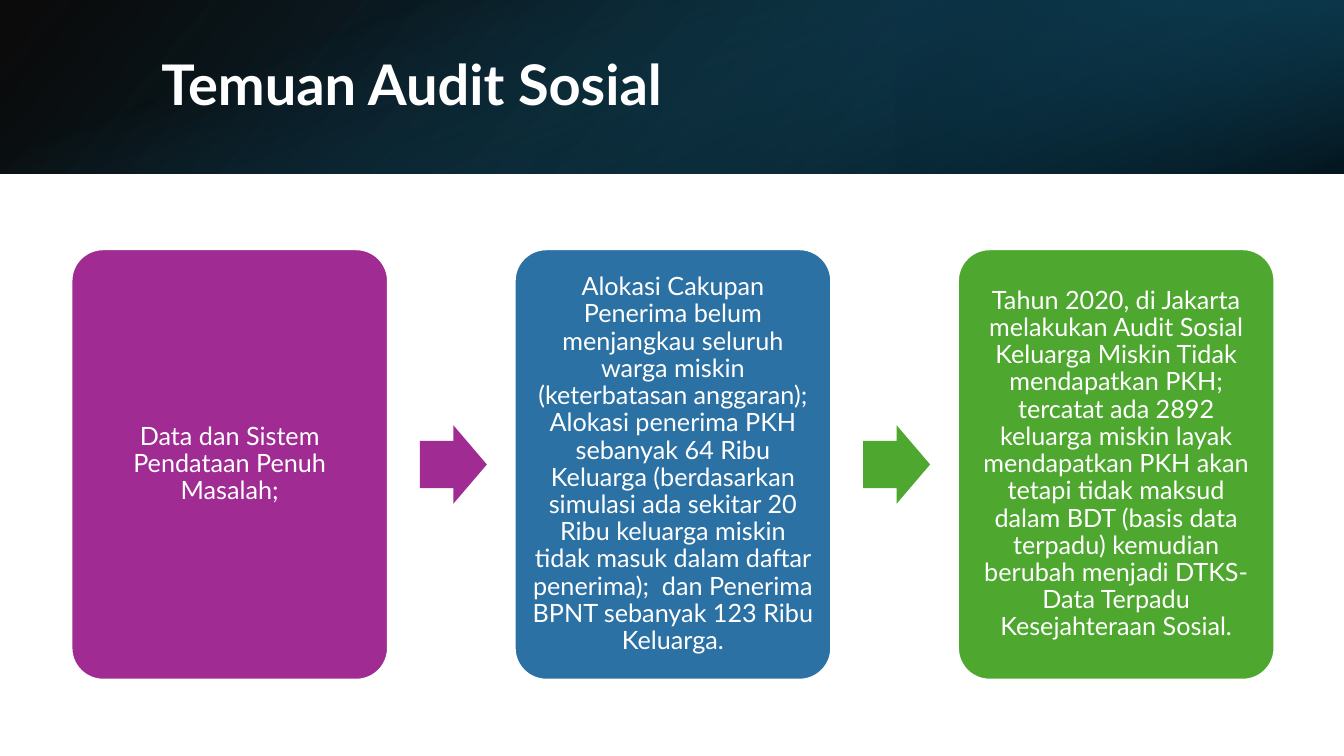
from dataclasses import dataclass

from lxml.etree import SubElement
from pptx import Presentation
from pptx.dml.color import RGBColor
from pptx.enum.shapes import MSO_SHAPE as SHAPE
from pptx.enum.text import MSO_ANCHOR as ANCHOR, MSO_AUTO_SIZE as AUTO, PP_ALIGN as ALIGN
from pptx.oxml.ns import qn
from pptx.util import Cm, Pt


@dataclass(frozen=True)
class Theme:
    font: str = "Lato"
    title_size: int = 40
    body_size: int = 18
    white: str = "FFFFFF"
    black: str = "000000"
    teal: str = "156082"
    deep_teal: str = "104862"
    dark_teal: str = "0B3041"
    purple: str = "A02B93"
    blue: str = "2C71A4"
    green: str = "4EA72E"


THEME = Theme()
SLIDE_W, SLIDE_H = 33.87, 19.05
BANNER_H = 4.38
CARD_X, CARD_Y, CARD_W, CARD_H = 1.8, 6.28, 7.98, 10.85
CARD_STEP = 11.17
ARROW_GAP, ARROW_W, ARROW_H = 0.8, 1.69, 1.98

FINDINGS = [
    (THEME.purple, "Data dan Sistem Pendataan Penuh Masalah;"),
    (THEME.blue,
     "Alokasi Cakupan Penerima belum menjangkau seluruh warga miskin "
     "(keterbatasan anggaran); Alokasi penerima PKH sebanyak 64 Ribu Keluarga "
     "(berdasarkan simulasi ada sekitar 20 Ribu keluarga miskin tidak masuk "
     "dalam daftar penerima);  dan Penerima BPNT sebanyak 123 Ribu Keluarga."),
    (THEME.green,
     "Tahun 2020, di Jakarta melakukan Audit Sosial Keluarga Miskin Tidak "
     "mendapatkan PKH; tercatat ada 2892 keluarga miskin layak mendapatkan PKH "
     "akan tetapi tidak maksud dalam BDT (basis data terpadu) kemudian berubah "
     "menjadi DTKS-Data Terpadu Kesejahteraan Sosial."),
]
ARROW_COLORS = [THEME.purple, THEME.green]


class SlideBuilder:
    def __init__(self, slide, theme):
        self.s, self.theme = slide, theme

    def shape(self, kind, x, y, w, h, color=None):
        sp = self.s.shapes.add_shape(kind, Cm(x), Cm(y), Cm(w), Cm(h))
        sp.shadow.inherit = False
        sp.line.fill.background()
        if color:
            sp.fill.solid()
            sp.fill.fore_color.rgb = RGBColor.from_string(color)
        return sp

    def gradient(self, x, y, w, h, stops, angle, rotation=0, flip=False):
        """Rectangle with two stops of (position %, colour, opacity %); angle is clockwise."""
        sp = self.shape(SHAPE.RECTANGLE, x, y, w, h)
        sp.rotation = rotation
        if flip:
            sp._element.spPr.find(qn("a:xfrm")).set("flipH", "1")
        sp.fill.gradient()
        sp.fill.gradient_angle = 360 - angle
        for stop, (position, color, opacity) in zip(sp.fill.gradient_stops, stops):
            stop.position = position / 100
            stop.color.rgb = RGBColor.from_string(color)
            srgb = stop._gs.find(qn("a:srgbClr"))
            SubElement(srgb, qn("a:alpha")).set("val", str(opacity * 1000))

    def set_text(self, sp, text, size, align, bold=False):
        tf = sp.text_frame
        tf.text = text
        tf.word_wrap = True
        tf.auto_size = AUTO.NONE
        tf.vertical_anchor = ANCHOR.MIDDLE
        p = tf.paragraphs[0]
        p.alignment, p.line_spacing = align, 0.9
        font = p.runs[0].font
        font.name, font.size, font.bold = self.theme.font, Pt(size), bold
        font.color.rgb = RGBColor.from_string(self.theme.white)

    def title(self, text, x, y, w, h):
        sp = self.s.shapes.title
        sp.left, sp.top, sp.width, sp.height = Cm(x), Cm(y), Cm(w), Cm(h)
        self.set_text(sp, text, self.theme.title_size, ALIGN.LEFT, bold=True)
        sp._element.getparent().append(sp._element)  # in front of the banner

    def card(self, x, color, text):
        sp = self.shape(SHAPE.ROUNDED_RECTANGLE, x, CARD_Y, CARD_W, CARD_H, color)
        sp.adjustments[0] = 0.1
        sp.line.color.rgb = RGBColor.from_string(self.theme.white)
        sp.line.width = Pt(1.5)
        tf = sp.text_frame
        tf.margin_left = tf.margin_right = tf.margin_top = tf.margin_bottom = Cm(0.18)
        self.set_text(sp, text, self.theme.body_size, ALIGN.CENTER)

    def arrow(self, x, color):
        y = CARD_Y + (CARD_H - ARROW_H) / 2
        sp = self.shape(SHAPE.RIGHT_ARROW, x, y, ARROW_W, ARROW_H, color)
        sp.adjustments[0], sp.adjustments[1] = 0.6, 0.5

    def banner(self):
        t = self.theme
        self.gradient(0, 0, SLIDE_W, BANNER_H,
                      [(0, t.black, 96), (100, t.deep_teal, 100)], 140, flip=True)
        self.gradient(SLIDE_W * 2 / 3, 0, SLIDE_W / 3, BANNER_H,
                      [(19, t.dark_teal, 68), (100, t.teal, 79)], 320, 180, flip=True)
        offset = (SLIDE_W - BANNER_H) / 2
        self.gradient(offset, -offset, BANNER_H, SLIDE_W,
                      [(23, t.teal, 0), (99, t.black, 74)], 340, 90)


def main():
    prs = Presentation()
    prs.slide_width, prs.slide_height = Cm(SLIDE_W), Cm(SLIDE_H)
    page = SlideBuilder(prs.slides.add_slide(prs.slide_layouts[5]), THEME)
    page.banner()
    page.title("Temuan Audit Sosial", 3.81, 0.97, 27.89, 2.44)
    for i, (color, text) in enumerate(FINDINGS):
        page.card(CARD_X + i * CARD_STEP, color, text)
    for i, color in enumerate(ARROW_COLORS):
        page.arrow(CARD_X + i * CARD_STEP + CARD_W + ARROW_GAP, color)
    prs.save("out.pptx")


if __name__ == "__main__":
    main()
